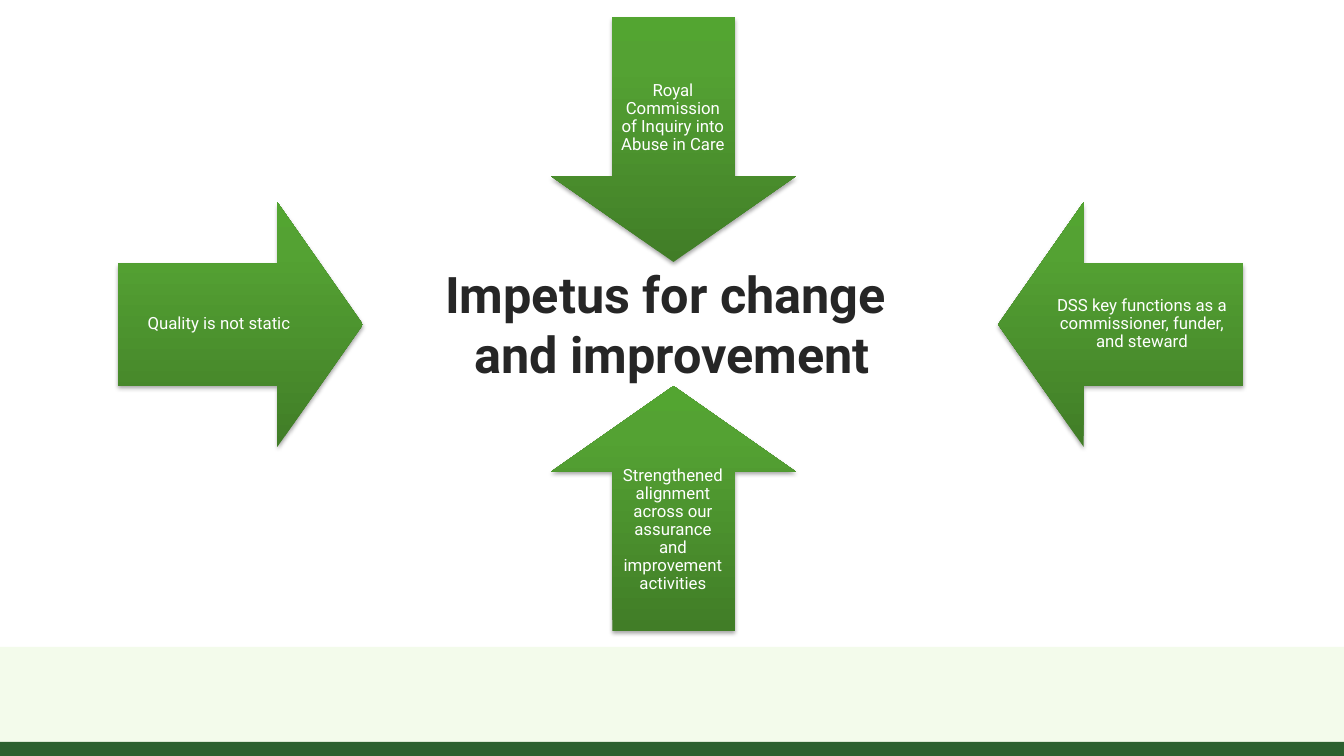
from dataclasses import dataclass

from lxml import etree
from pptx import Presentation
from pptx import util as u
from pptx.dml.color import RGBColor
from pptx.enum import shapes, text
from pptx.oxml import parse_xml

NS = "http://schemas.openxmlformats.org/drawingml/2006/main"
ARROW = 245            # side of the square around each arrow
SHAFT_SIDE = 61        # gap from the square's side to the shaft
LABEL_W = 122
LABEL_LEN = 202
TIP = ARROW - LABEL_LEN


@dataclass(frozen=True)
class Theme:
    font: str = "Roboto"
    title: str = "262626"
    label: str = "FFFFFF"
    band: str = "F3FBEB"
    footer: str = "2C602F"
    gradient: tuple[tuple[int, str], ...] = (
        (0, "417D27"), (80, "54A233"), (100, "53A531"))
    title_pt: int = 36
    label_pt: int = 12


@dataclass(frozen=True)
class Box:
    x: int
    y: int
    w: int
    h: int

    def emu(self) -> list[int]:
        return [px(v) for v in (self.x, self.y, self.w, self.h)]


@dataclass(frozen=True)
class Driver:
    label: str
    x: int
    y: int
    turn: int

    def label_box(self) -> Box:
        """Box along the shaft, starting at the arrow's flat end."""
        dx, dy = {0: (SHAFT_SIDE, 0), 90: (TIP, SHAFT_SIDE),
                  180: (SHAFT_SIDE, TIP), 270: (0, SHAFT_SIDE)}[self.turn]
        upright = self.turn in (0, 180)
        w, h = (LABEL_W, LABEL_LEN) if upright else (LABEL_LEN, LABEL_W)
        return Box(self.x + dx, self.y + dy, w, h)


THEME = Theme()
BANDS = [(Box(0, 647, 1344, 97), THEME.band),
         (Box(0, 742, 1344, 14), THEME.footer)]
DRIVERS = [
    Driver("Royal Commission of Inquiry into Abuse in Care", 551, 17, 0),
    Driver("DSS key functions as a commissioner, funder, and steward",
           998, 202, 90),
    Driver("Strengthened alignment across our assurance and improvement "
           "activities", 551, 386, 180),
    Driver("Quality is not static", 118, 202, 270),
]


def px(n: int) -> int:
    return round(n * 914400 / 100.8)


def add_band(s, box: Box, color: str) -> None:
    sp = s.shapes.add_shape(shapes.MSO_SHAPE.RECTANGLE, *box.emu())
    sp.shadow.inherit = False
    sp.fill.solid()
    sp.fill.fore_color.rgb = RGBColor.from_string(color)
    sp.line.fill.background()


def add_arrow(s, driver: Driver) -> None:
    """Turned arrow whose gradient and shadow stay upright."""
    box = Box(driver.x, driver.y, ARROW, ARROW)
    sp = s.shapes.add_shape(shapes.MSO_SHAPE.DOWN_ARROW, *box.emu())
    sp.rotation = driver.turn
    sp.adjustments[0], sp.adjustments[1] = 0.5, 0.35
    sp.line.fill.background()
    sp.shadow.inherit = False
    stops = "".join(f'<a:gs pos="{pos * 1000}"><a:srgbClr val="{color}"/></a:gs>'
                    for pos, color in THEME.gradient)
    fill = parse_xml(f'<a:gradFill xmlns:a="{NS}" rotWithShape="0"><a:gsLst>{stops}'
                     '</a:gsLst><a:lin ang="16200000" scaled="0"/></a:gradFill>')
    props = sp._element.spPr
    props.find(f"{{{NS}}}prstGeom").addnext(fill)
    shadow = etree.SubElement(
        props.find(f"{{{NS}}}effectLst"), f"{{{NS}}}outerShdw",
        blurRad="40000", dist="23000", dir="5400000", rotWithShape="0")
    color = etree.SubElement(shadow, f"{{{NS}}}srgbClr", val="000000")
    etree.SubElement(color, f"{{{NS}}}alpha", val="35000")


def add_text(s, box: Box, words: str, size: int, color: str, inset: int,
             spacing: float = 1.0, bold: bool = False) -> None:
    tf = s.shapes.add_textbox(*box.emu()).text_frame
    frame = {"word_wrap": True, "vertical_anchor": text.MSO_ANCHOR.MIDDLE}
    frame |= {f"margin_{side}": px(inset)
              for side in ("left", "top", "right", "bottom")}
    for name, value in frame.items():
        setattr(tf, name, value)
    p = tf.paragraphs[0]
    p.text = words.replace("\n", "\v")
    p.alignment = text.PP_ALIGN.CENTER
    p.line_spacing = spacing
    for r in p.runs:
        for name, value in {"name": THEME.font, "size": u.Pt(size),
                            "bold": bold}.items():
            setattr(r.font, name, value)
        r.font.color.rgb = RGBColor.from_string(color)


def main() -> None:
    prs = Presentation()
    prs.slide_width, prs.slide_height = px(1344), px(756)
    s = prs.slides.add_slide(prs.slide_layouts[6])
    for box, color in BANDS:
        add_band(s, box, color)
    for driver in DRIVERS:
        add_arrow(s, driver)
        add_text(s, driver.label_box(), driver.label, THEME.label_pt,
                 THEME.label, inset=9, spacing=0.9)
    add_text(s, Box(337, 259, 670, 129), "Impetus for change \nand improvement",
             THEME.title_pt, THEME.title, inset=5, bold=True)
    prs.save("out.pptx")


if __name__ == "__main__":
    main()
